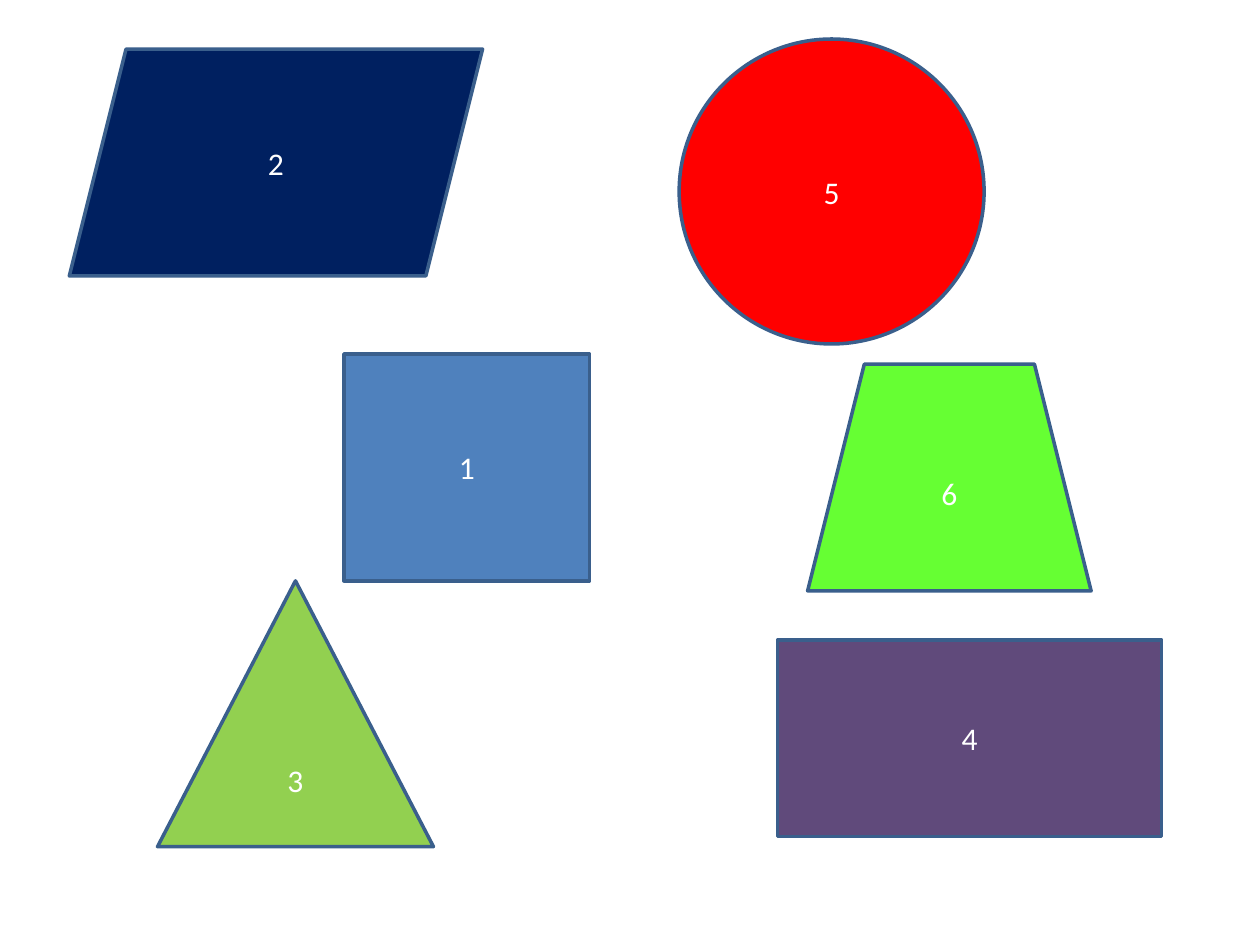
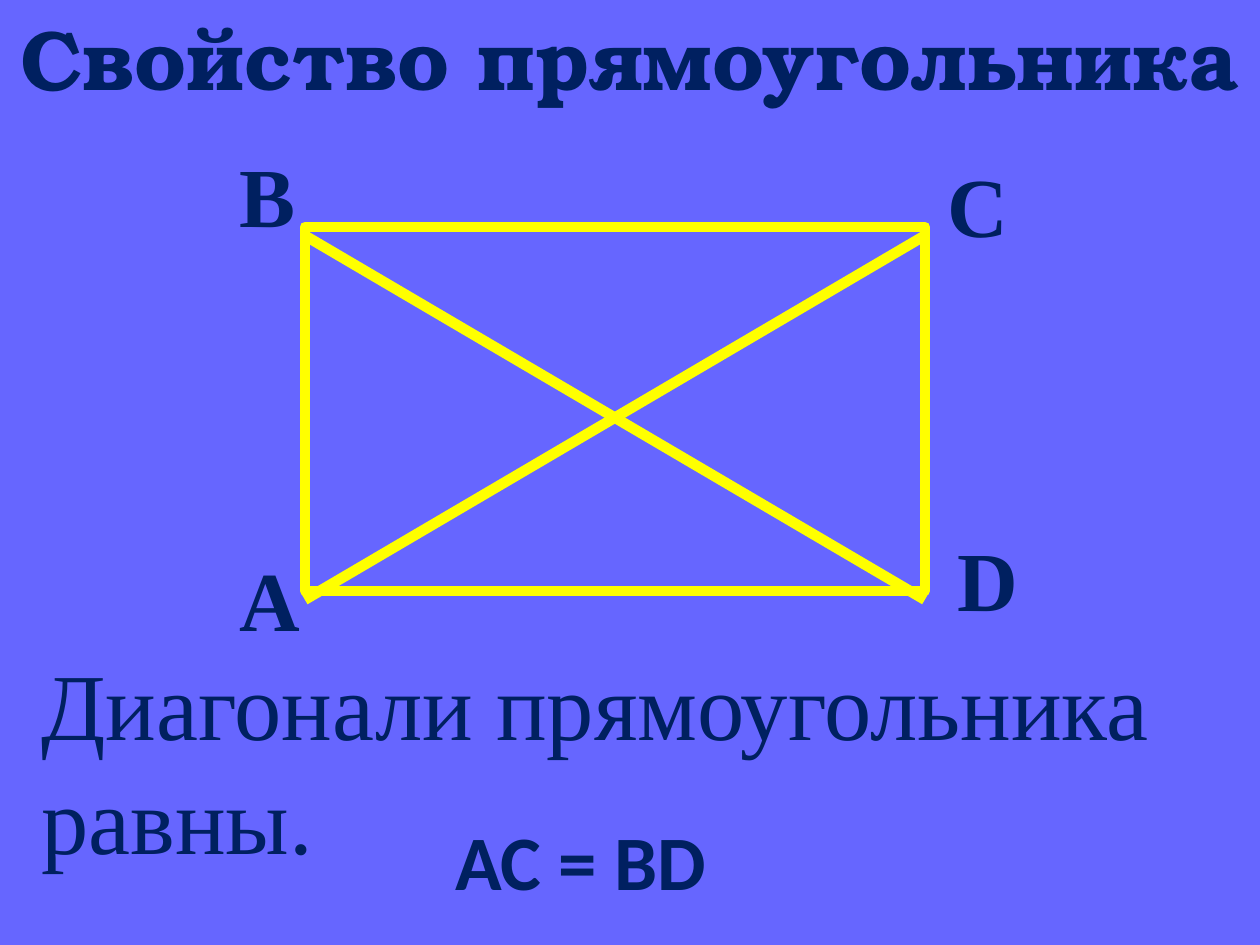
from typing import NamedTuple

from lxml.etree import SubElement
from pptx import Presentation
from pptx.dml.color import RGBColor
from pptx.enum.shapes import MSO_CONNECTOR as Connector
from pptx.enum.shapes import MSO_SHAPE as Preset
from pptx.enum.text import MSO_ANCHOR as Anchor
from pptx.enum.text import MSO_AUTO_SIZE as AutoSize
from pptx.enum.text import PP_ALIGN as Align
from pptx.oxml.ns import qn
from pptx.util import Inches, Pt

COLORS = {
    "navy": "002060",
    "lime": "92D050",
    "purple": "604A7B",
    "red": "FF0000",
    "blue": "4F81BD",
    "green": "66FF33",
    "outline": "3A5F8C",
    "white": "FFFFFF",
    "violet": "6666FF",
    "yellow": "FFFF00",
}
SANS = "Calibri"
SERIF = "Times New Roman"
DISPLAY = "TeX Gyre Bonum"


class Area(NamedTuple):
    left: float
    top: float
    width: float
    height: float


class Figure(NamedTuple):
    number: str
    preset: Preset
    color: str
    area: Area


class Vertex(NamedTuple):
    letter: str
    left: float
    top: float


FIGURES = [
    Figure("2", Preset.PARALLELOGRAM, "navy", Area(0.55, 0.39, 3.28, 1.8)),
    Figure("3", Preset.ISOSCELES_TRIANGLE, "lime", Area(1.25, 4.61, 2.19, 2.11)),
    Figure("4", Preset.RECTANGLE, "purple", Area(6.17, 5.08, 3.05, 1.56)),
    Figure("5", Preset.OVAL, "red", Area(5.39, 0.31, 2.42, 2.42)),
    Figure("1", Preset.RECTANGLE, "blue", Area(2.73, 2.81, 1.95, 1.8)),
    Figure("6", Preset.TRAPEZOID, "green", Area(6.41, 2.89, 2.25, 1.8)),
]
VERTICES = [
    Vertex("А", 1.8, 4.3),
    Vertex("В", 1.8, 1.09),
    Vertex("С", 7.42, 1.17),
    Vertex("D", 7.5, 4.14),
]
RECTANGLE = Area(2.42, 1.8, 4.92, 2.89)
DIAGONAL_DROP = 0.07


def rgb(name: str) -> RGBColor:
    return RGBColor.from_string(COLORS[name])


def add_page(deck, background: str):
    page = deck.slides.add_slide(deck.slide_layouts[6])
    page.background.fill.solid()
    page.background.fill.fore_color.rgb = rgb(background)
    return page


def write(frame, text: str, *, size: float, font: str = SANS, color: str = "navy",
          bold: bool = False, align: Align = Align.LEFT) -> None:
    para = frame.paragraphs[0]
    para.alignment = align
    span = para.add_run()
    span.text = text
    span.font.size = Pt(size)
    span.font.name = font
    span.font.bold = bold
    span.font.color.rgb = rgb(color)


def add_text(page, area: Area, text: str, **style) -> None:
    box = page.shapes.add_textbox(*map(Inches, area))
    box.text_frame.word_wrap = True
    box.text_frame.auto_size = AutoSize.SHAPE_TO_FIT_TEXT
    write(box.text_frame, text, **style)


def set_line(item, color: str, width: float) -> None:
    item.line.color.rgb = rgb(color)
    item.line.width = Pt(width)


def add_figure(page, figure: Figure) -> None:
    shape = page.shapes.add_shape(figure.preset, *map(Inches, figure.area))
    shape.shadow.inherit = False
    shape.fill.solid()
    shape.fill.fore_color.rgb = rgb(figure.color)
    set_line(shape, "outline", 2)
    shape.text_frame.vertical_anchor = Anchor.MIDDLE
    write(shape.text_frame, figure.number, size=18, color="white", align=Align.CENTER)


def add_diagonals(page, area: Area) -> None:
    right = area.left + area.width
    top = area.top + DIAGONAL_DROP
    bottom = top + area.height
    for start, end in ((right, area.left), (area.left, right)):
        diagonal = page.shapes.add_connector(
            Connector.STRAIGHT, *map(Inches, (start, bottom, end, top)))
        set_line(diagonal, "yellow", 6)
        SubElement(diagonal._element.spPr, qn("a:effectLst"))


def add_rectangle(page, area: Area) -> None:
    shape = page.shapes.add_shape(Preset.RECTANGLE, *map(Inches, area))
    shape.shadow.inherit = False
    shape.fill.background()
    set_line(shape, "yellow", 6)


def build_figures(deck) -> None:
    page = add_page(deck, "white")
    for figure in FIGURES:
        add_figure(page, figure)


def build_property(deck) -> None:
    page = add_page(deck, "violet")
    add_diagonals(page, RECTANGLE)
    add_text(page, Area(0, 0, 10, 0.91), "Свойство прямоугольника",
             size=48, font=DISPLAY, bold=True, align=Align.CENTER)
    add_text(page, Area(0.23, 5.08, 9.14, 2.66), "Диагонали прямоугольника равны.",
             size=54, font=SERIF)
    add_text(page, Area(3.52, 6.41, 2.97, 0.84), "АС = ВD", size=44, bold=True)
    for vertex in VERTICES:
        add_text(page, Area(vertex.left, vertex.top, 0.78, 0.91), vertex.letter,
                 size=48, font=SERIF, bold=True)
    add_rectangle(page, RECTANGLE)


def main() -> None:
    deck = Presentation()
    deck.slide_width = Inches(10)
    deck.slide_height = Inches(7.5)
    build_figures(deck)
    build_property(deck)
    deck.save("out.pptx")


if __name__ == "__main__":
    main()
